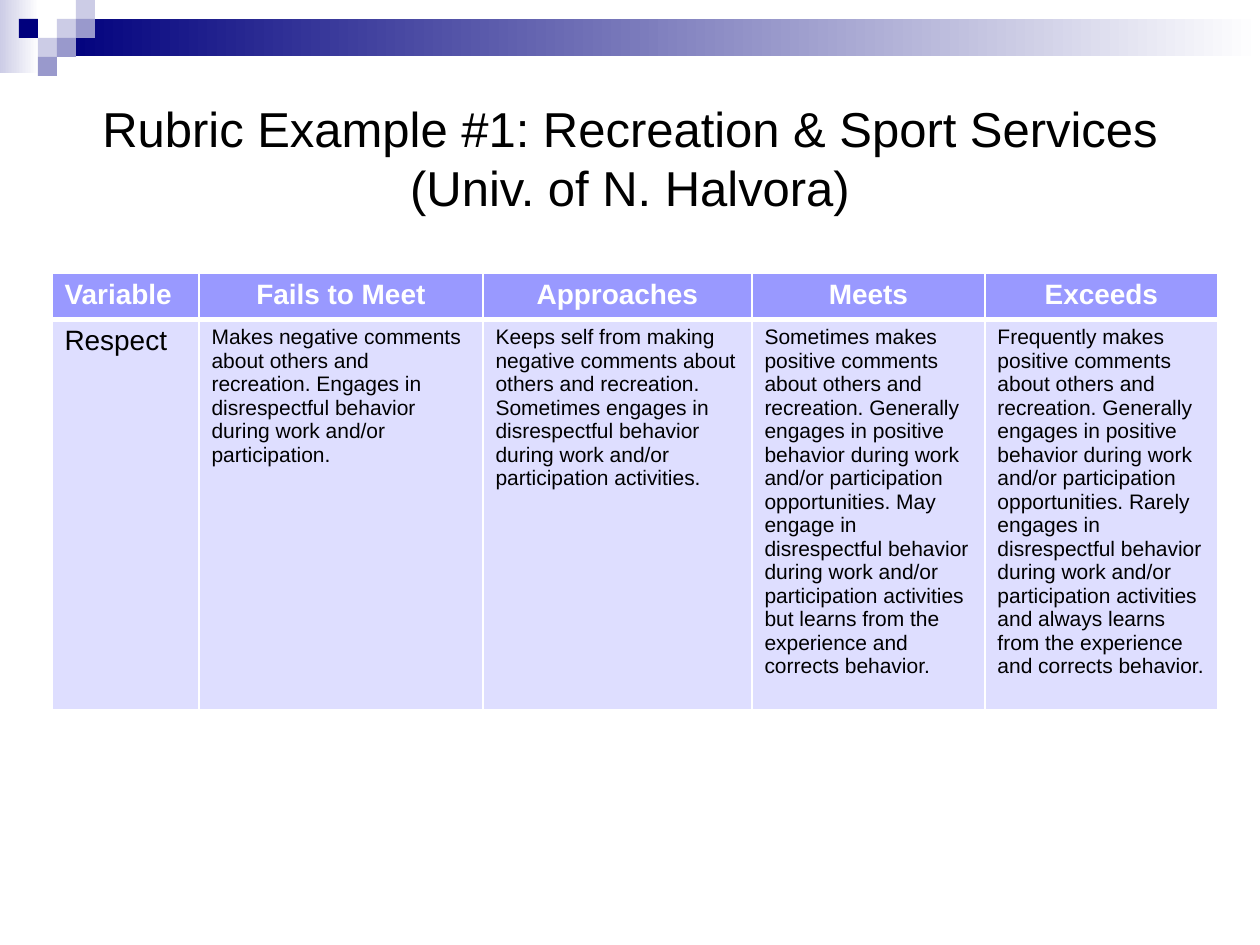
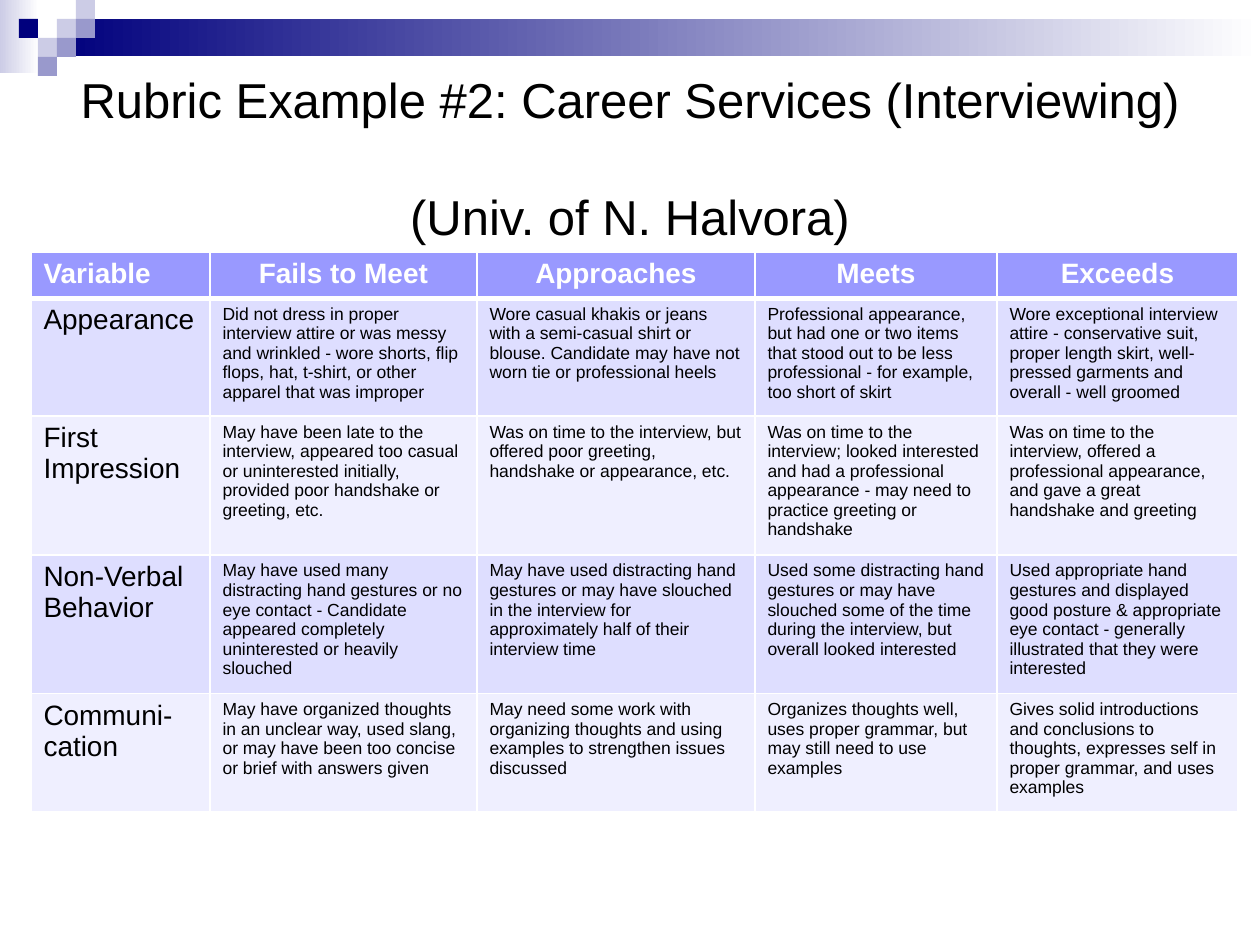
from lxml import etree
from pptx import Presentation
from pptx import util as u
from pptx.dml.color import RGBColor
from pptx.enum import shapes, text
from pptx.oxml import ns

SCALE = 914400 / 126
FONT = "Arial"
NAVY = RGBColor(0x00, 0x00, 0x7D)
MID = RGBColor(0x99, 0x99, 0xCC)
PALE = RGBColor(0xCC, 0xCC, 0xE6)
WHITE = RGBColor(0xFF, 0xFF, 0xFF)
BLACK = RGBColor(0x00, 0x00, 0x00)
HEADER = RGBColor(0x99, 0x99, 0xFF)
ROW_FILLS = (RGBColor(0xDE, 0xDE, 0xFF), RGBColor(0xEF, 0xEF, 0xFF))

SQUARE = 19
SQUARES = [(3, 1, PALE), (4, 0, PALE), (4, 1, MID), (2, 2, PALE),
           (1, 1, NAVY), (3, 2, MID), (2, 3, MID)]

SCHOOL = "(Univ. of N. Halvora)"
LEVELS = ["Variable", "Fails to Meet", "Approaches", "Meets", "Exceeds"]

RECREATION = [
    ["Respect",
     "Makes negative comments about others and recreation. Engages in "
     "disrespectful behavior during work and/or participation.",
     "Keeps self from making negative comments about others and recreation. "
     "Sometimes engages in disrespectful behavior during work and/or "
     "participation activities.",
     "Sometimes makes positive comments about others and recreation. Generally "
     "engages in positive behavior during work and/or participation "
     "opportunities. May engage in disrespectful behavior during work and/or "
     "participation activities but learns from the experience and corrects "
     "behavior.",
     "Frequently makes positive comments about others and recreation. Generally "
     "engages in positive behavior during work and/or participation "
     "opportunities. Rarely engages in disrespectful behavior during work "
     "and/or participation activities and always learns from the experience "
     "and corrects behavior."],
]

INTERVIEWING = [
    ["Appearance",
     "Did not dress in proper interview attire or was messy and wrinkled - wore "
     "shorts, flip flops, hat, t-shirt, or other apparel that was improper",
     "Wore casual khakis or jeans with a semi-casual shirt or blouse. Candidate "
     "may have not worn tie or professional heels",
     "Professional appearance, but had one or two items that stood out to be "
     "less professional - for example, too short of skirt",
     "Wore exceptional interview attire - conservative suit, proper length "
     "skirt, well-pressed garments and overall - well groomed"],
    ["First Impression",
     "May have been late to the interview, appeared too casual or uninterested "
     "initially, provided poor handshake or greeting, etc.",
     "Was on time to the interview, but offered poor greeting, handshake or "
     "appearance, etc.",
     "Was on time to the interview; looked interested and had a professional "
     "appearance - may need to practice greeting or handshake",
     "Was on time to the interview, offered a professional appearance, and gave "
     "a great handshake and greeting"],
    ["Non-Verbal Behavior",
     "May have used many distracting hand gestures or no eye contact - Candidate "
     "appeared completely uninterested or heavily slouched",
     "May have used distracting hand gestures or may have slouched in the "
     "interview for approximately half of their interview time",
     "Used some distracting hand gestures or may have slouched some of the time "
     "during the interview, but overall looked interested",
     "Used appropriate hand gestures and displayed good posture & appropriate "
     "eye contact - generally illustrated that they were interested"],
    ["Communi-\ncation",
     "May have organized thoughts in an unclear way, used slang, or may have "
     "been too concise or brief with answers given",
     "May need some work with organizing thoughts and using examples to "
     "strengthen issues discussed",
     "Organizes thoughts well, uses proper grammar, but may still need to use "
     "examples",
     "Gives solid introductions and conclusions to thoughts, expresses self in "
     "proper grammar, and uses examples"],
]


def px(n):
    return u.Emu(round(n * SCALE))


def set_text(tf, content, size, color, bold=False, align=text.PP_ALIGN.LEFT):
    tf.text = content
    for p in tf.paragraphs:
        p.alignment = align
        p.font.name = FONT
        p.font.size = u.Pt(size)
        p.font.bold = bold
        p.font.color.rgb = color
        etree.SubElement(p._p, ns.qn("a:endParaRPr"), sz=str(size * 100))


def add_rect(s, x, y, w, h, color, fade=False):
    sp = s.shapes.add_shape(shapes.MSO_SHAPE.RECTANGLE, px(x), px(y), px(w), px(h))
    sp.shadow.inherit = False
    sp.line.fill.background()
    if fade:
        sp.fill.gradient()
        sp.fill.gradient_angle = 0
        for stop, c in zip(sp.fill.gradient_stops, (color, WHITE)):
            stop.color.rgb = c
    else:
        sp.fill.solid()
        sp.fill.fore_color.rgb = color


def add_banner(s):
    add_rect(s, 0, 0, 39, 73, PALE, fade=True)
    add_rect(s, 3 * SQUARE, SQUARE, 1260 - 3 * SQUARE, 37, NAVY, fade=True)
    for col, row, color in SQUARES:
        add_rect(s, col * SQUARE, row * SQUARE, SQUARE, SQUARE, color)


def add_title(s, content):
    tf = s.shapes.add_textbox(px(63), px(63), px(1134), px(189)).text_frame
    tf.word_wrap = True
    tf.vertical_anchor = text.MSO_ANCHOR.MIDDLE
    set_text(tf, content, 28, BLACK, align=text.PP_ALIGN.CENTER)


def set_borders(cell, top, bottom):
    tcPr = cell._tc.get_or_add_tcPr()
    widths = {"lnL": 1, "lnR": 1, "lnT": top, "lnB": bottom}
    for i, (tag, width) in enumerate(widths.items()):
        ln = etree.Element(ns.qn("a:" + tag), w=str(u.Pt(width)))
        fill = etree.SubElement(ln, ns.qn("a:solidFill"))
        etree.SubElement(fill, ns.qn("a:srgbClr"), val=str(WHITE))
        tcPr.insert(i, ln)


def add_rubric(s, x, y, widths, heights, criteria, size):
    rows = [LEVELS] + criteria
    tbl = s.shapes.add_table(len(rows), len(LEVELS), px(x), px(y),
                             px(sum(widths)), px(sum(heights))).table
    for column, w in zip(tbl.columns, widths):
        column.width = px(w)
    for row, h in zip(tbl.rows, heights):
        row.height = px(h)
    for r, row in enumerate(rows):
        for c, content in enumerate(row):
            cell = tbl.cell(r, c)
            cell.fill.solid()
            if r == 0:
                cell.fill.fore_color.rgb = HEADER
                align = text.PP_ALIGN.CENTER if c else text.PP_ALIGN.LEFT
                set_text(cell.text_frame, content, 16, WHITE, True, align)
            else:
                cell.fill.fore_color.rgb = ROW_FILLS[(r - 1) % 2]
                set_text(cell.text_frame, content, size if c else 16, BLACK)
            set_borders(cell, 3 if r == 1 else 1, 3 if r == 0 else 1)


def add_rubric_slide(prs, title, *rubric):
    s = prs.slides.add_slide(prs.slide_layouts[6])
    add_banner(s)
    add_title(s, title)
    add_rubric(s, *rubric)


def main():
    prs = Presentation()
    prs.slide_width, prs.slide_height = px(1260), px(945)
    add_rubric_slide(
        prs, f"Rubric Example #1: Recreation & Sport Services {SCHOOL}",
        52, 273, [147, 284, 269, 233, 233], [43, 389], RECREATION, 12)
    add_rubric_slide(
        prs, f"Rubric Example #2: Career Services (Interviewing) \v{SCHOOL}",
        31, 252, [179, 267, 278, 242, 241], [43, 110, 130, 130, 110],
        INTERVIEWING, 10)
    prs.save("out.pptx")


if __name__ == "__main__":
    main()
